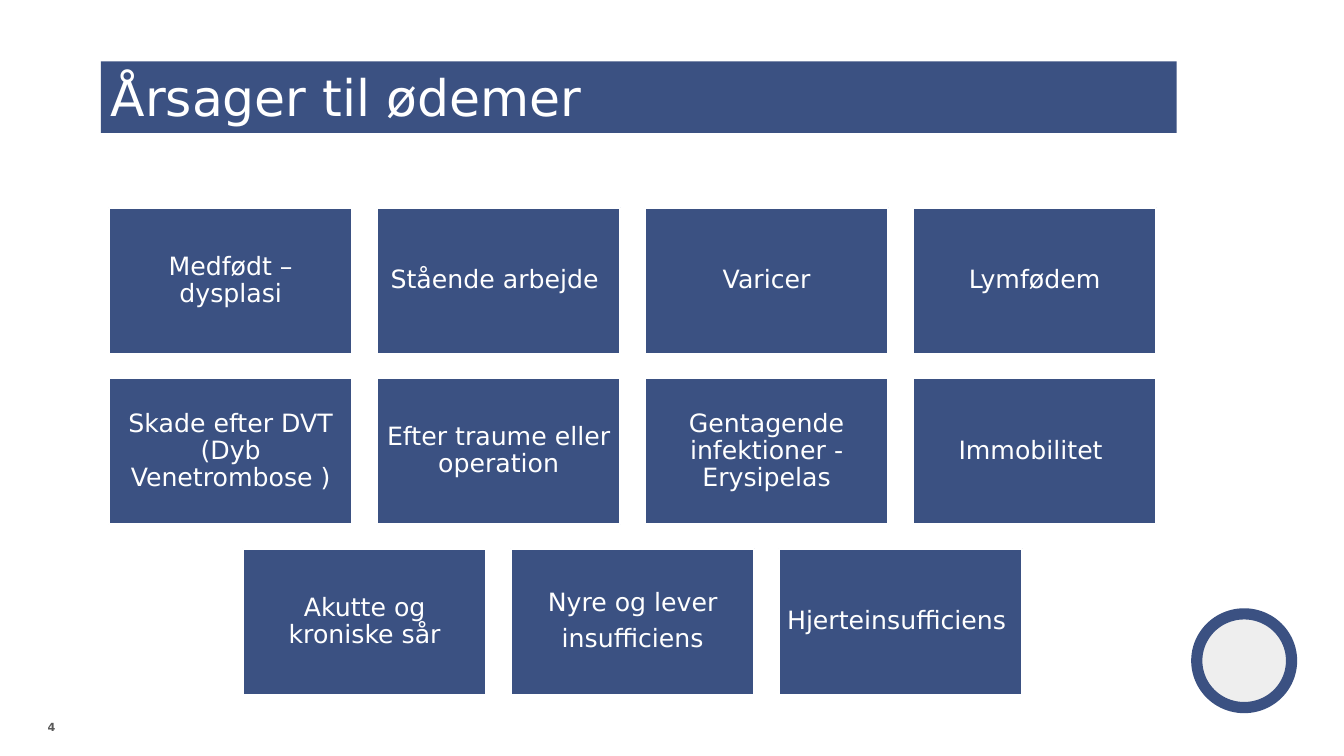
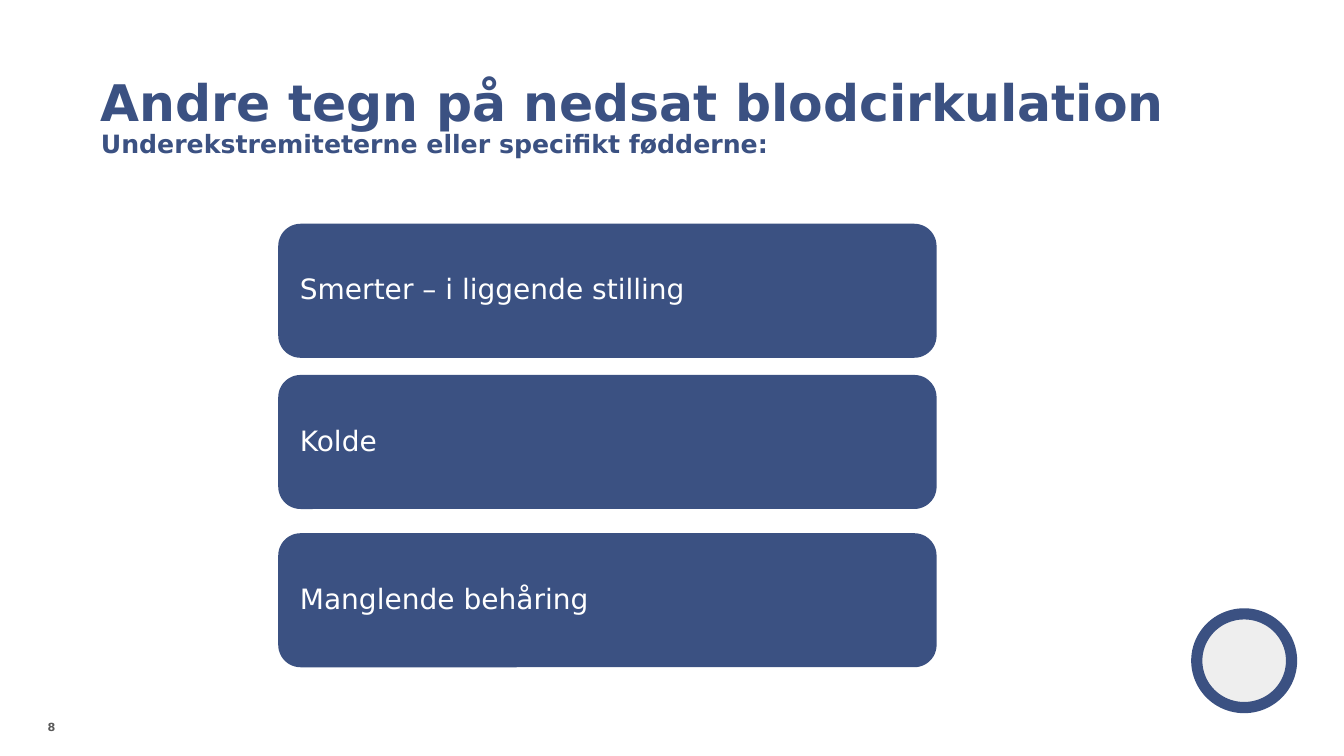
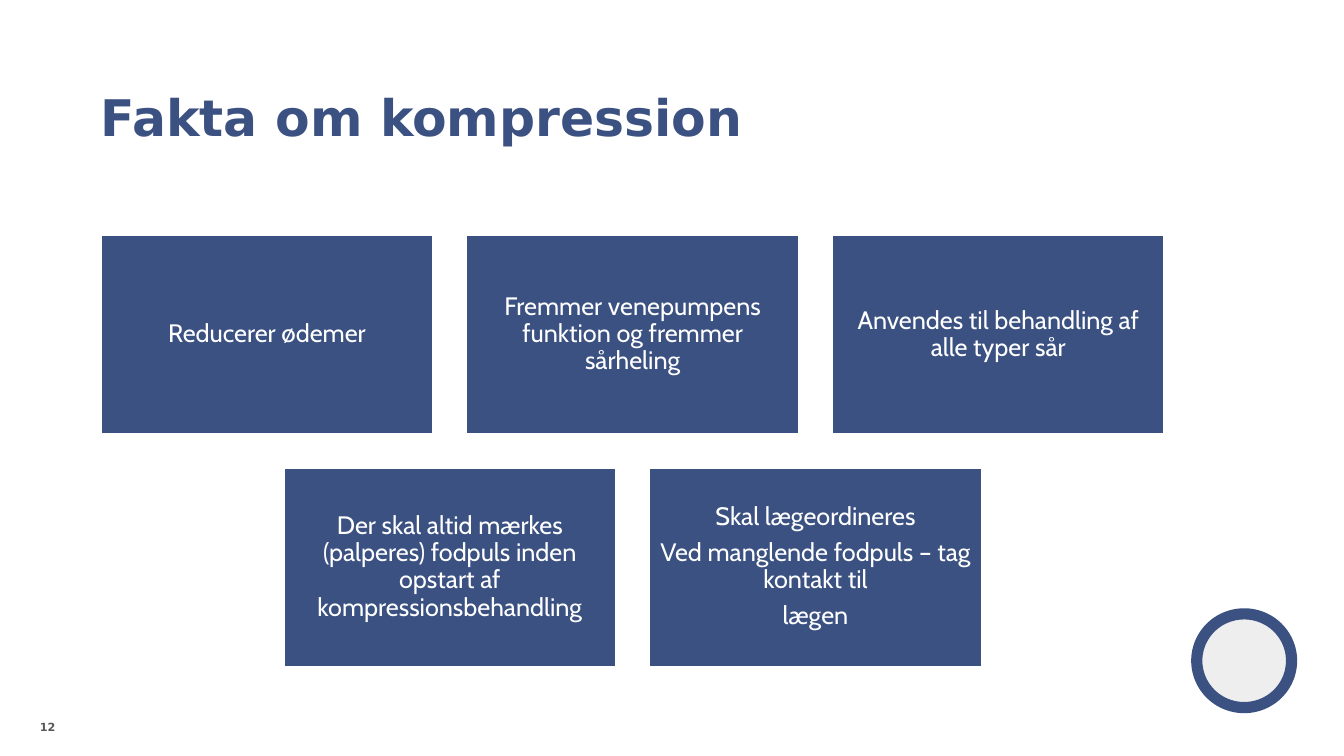
from pptx import Presentation
from pptx.dml.color import RGBColor
from pptx.enum.shapes import MSO_SHAPE
from pptx.enum.text import MSO_ANCHOR, PP_ALIGN
from pptx.util import Inches, Pt

RECT, ROUND, OVAL = MSO_SHAPE.RECTANGLE, MSO_SHAPE.ROUNDED_RECTANGLE, MSO_SHAPE.OVAL
TOP, MIDDLE, BOTTOM = MSO_ANCHOR.TOP, MSO_ANCHOR.MIDDLE, MSO_ANCHOR.BOTTOM
LEFT, CENTER, RIGHT = PP_ALIGN.LEFT, PP_ALIGN.CENTER, PP_ALIGN.RIGHT

COLORS = {"navy": "3B5182", "white": "FFFFFF", "pale": "EEEEEE", "gray": "595959"}
SANS, CABIN = "DejaVu Sans", "Cabin"

TITLE = {"name": SANS, "size": Pt(36), "bold": True, "color": "navy"}
SUBTITLE = {**TITLE, "size": Pt(18)}
BAND_TITLE = {**TITLE, "bold": False, "color": "white"}
TILE = {"name": SANS, "size": Pt(18), "color": "white"}
BAR = {**TILE, "size": Pt(20)}
NUMBER = {"name": SANS, "size": Pt(8), "bold": True, "color": "gray"}


def rgb(key):
    """Return the named colour."""
    return RGBColor.from_string(COLORS[key])


def add_run(p, text, fmt):
    """Add a run formatted from a dict."""
    r = p.add_run()
    r.text = text
    for key, value in fmt.items():
        if key == "color":
            r.font.color.rgb = rgb(value)
        else:
            setattr(r.font, key, value)


def set_frame(sp, anchor, insets):
    """Set wrapping, anchor and the horizontal and vertical insets."""
    tf = sp.text_frame
    side, edge = (Inches(v) for v in insets)
    values = {"word_wrap": True, "vertical_anchor": anchor,
              "margin_left": side, "margin_right": side,
              "margin_top": edge, "margin_bottom": edge}
    for key, value in values.items():
        setattr(tf, key, value)
    return tf


def write(tf, lines, fmt, **para):
    """Write one paragraph for each line."""
    for i, line in enumerate(lines):
        p = tf.add_paragraph() if i else tf.paragraphs[0]
        for key, value in para.items():
            setattr(p, key, value)
        add_run(p, line, fmt)


def add_shape(s, kind, box, fill, line=None, width=0):
    """Add a filled shape without a shadow."""
    sp = s.shapes.add_shape(kind, *map(Inches, box))
    sp.shadow.inherit = False
    sp.fill.solid()
    sp.fill.fore_color.rgb = rgb(fill)
    if line:
        sp.line.color.rgb = rgb(line)
        sp.line.width = Pt(width)
    else:
        sp.line.fill.background()
    return sp


def add_page(prs, number):
    """Add a slide with the shared ring and page number."""
    s = prs.slides.add_slide(prs.slide_layouts[6])
    add_shape(s, OVAL, (11.87, 6.09, 0.94, 0.93), "pale", "navy", 8)
    sp = s.shapes.add_textbox(*map(Inches, (0.16, 7.15, 0.39, 0.35)))
    write(set_frame(sp, TOP, (0, 0)), [str(number)], NUMBER,
          alignment=RIGHT, space_after=Pt(6))
    return s


def add_title(s, top, title, subtitle=None, after=0):
    """Add a bottom-anchored title with an optional second line."""
    sp = s.shapes.add_textbox(*map(Inches, (1, top, 10.55, 1.18)))
    tf = set_frame(sp, BOTTOM, (0, 0))
    write(tf, [title], TITLE, line_spacing=0.9, space_after=Pt(after))
    if subtitle:
        p = tf.paragraphs[0]
        p.add_line_break()
        add_run(p, subtitle, SUBTITLE)


def add_band_title(s, box, title):
    """Add a title on a navy band."""
    sp = add_shape(s, RECT, box, "navy")
    write(set_frame(sp, TOP, (0.1, 0.05)), [title], BAND_TITLE, alignment=LEFT)


def add_tiles(s, left, top, width, rows, font):
    """Add centred rows of tiles, sized by the longest row."""
    cols = max(map(len, rows))
    w = width / (cols + 0.1 * (cols - 1))
    h, gap = 0.6 * w, 0.1 * w
    for i, row in enumerate(rows):
        indent = (cols - len(row)) * (w + gap) / 2
        for j, text in enumerate(row):
            box = (left + indent + j * (w + gap), top + i * (h + gap), w, h)
            sp = add_shape(s, RECT, box, "navy", "white", 1.5)
            write(set_frame(sp, MIDDLE, (0.07, 0.07)), text.split("\n"),
                  {**TILE, "name": font}, alignment=CENTER,
                  line_spacing=0.9, space_after=Pt(6.3))


def add_bars(s, left, width, height, bars):
    """Add rounded bars, each at its own top."""
    for top, text in bars:
        sp = add_shape(s, ROUND, (left, top, width, height), "navy")
        write(set_frame(sp, MIDDLE, (0.15, 0.15)), [text], BAR,
              alignment=LEFT, line_spacing=0.9, space_after=Pt(7))


def causes_slide(prs):
    """Build the slide on causes of oedema."""
    s = add_page(prs, 4)
    add_tiles(s, 1.08, 2.06, 10.39, [
        ["Medfødt – dysplasi", "Stående arbejde ", "Varicer", "Lymfødem"],
        ["Skade efter DVT (Dyb Venetrombose )", "Efter traume eller operation",
         "Gentagende infektioner - Erysipelas", "Immobilitet "],
        ["Akutte og kroniske sår", "Nyre og lever\ninsufficiens",
         "Hjerteinsufficiens "],
    ], SANS)
    add_band_title(s, (1, 0.61, 10.67, 0.71), "Årsager til ødemer")


def signs_slide(prs):
    """Build the slide on signs of reduced circulation."""
    s = add_page(prs, 8)
    add_title(s, 0.4, "Andre tegn på nedsat blodcirkulation",
              "Underekstremiteterne eller specifikt fødderne:")
    add_bars(s, 2.76, 6.53, 1.33, [
        (2.22, "Smerter – i liggende stilling"),
        (3.72, "Kolde"),
        (5.29, "Manglende behåring"),
    ])


def facts_slide(prs):
    """Build the slide on compression facts."""
    s = add_page(prs, 12)
    add_title(s, 0.28, "Fakta om kompression", after=6)
    add_tiles(s, 1, 2.33, 10.55, [
        ["Reducerer ødemer",
         "Fremmer venepumpens funktion og fremmer sårheling",
         "Anvendes til behandling af alle typer sår"],
        ["Der skal altid mærkes (palperes) fodpuls inden opstart af "
         "kompressionsbehandling",
         "Skal lægeordineres\nVed manglende fodpuls – tag kontakt til\nlægen"],
    ], CABIN)


def main():
    """Build and save the presentation."""
    prs = Presentation()
    prs.slide_width, prs.slide_height = Inches(13.33), Inches(7.5)
    for build in (causes_slide, signs_slide, facts_slide):
        build(prs)
    prs.save("out.pptx")


if __name__ == "__main__":
    main()
